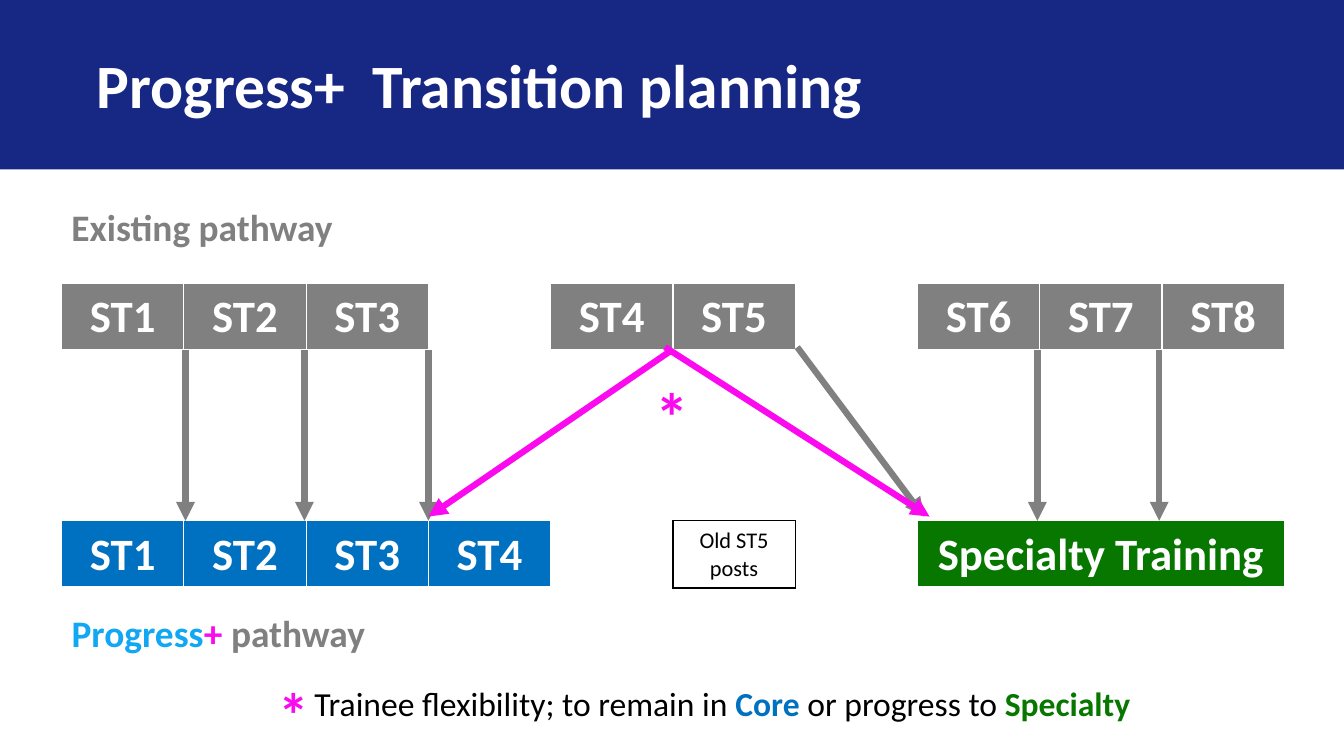
from lxml import etree
from pptx import Presentation
from pptx.dml.color import RGBColor
from pptx.enum.shapes import MSO_CONNECTOR, MSO_SHAPE
from pptx.enum.text import MSO_ANCHOR, PP_ALIGN
from pptx.oxml.ns import qn
from pptx.util import Pt

LINE = MSO_CONNECTOR.STRAIGHT
RECT = MSO_SHAPE.RECTANGLE
MIDDLE = MSO_ANCHOR.MIDDLE
LEFT, CENTER = PP_ALIGN.LEFT, PP_ALIGN.CENTER

HUES = {
    "navy": "162883", "gray": "808080", "blue": "0070C0", "green": "077700",
    "sky": "11A7F2", "pink": "FB09EF", "white": "FFFFFF", "black": "000000",
}
CELL = {"margin_left": Pt(9.6), "margin_right": Pt(9.6), "margin_top": Pt(4.8),
        "margin_bottom": Pt(4.8), "vertical_anchor": MIDDLE}
PLAIN = {"first_row": False, "horz_banding": False}
UNIT = 87.36
OLD = "Old ST5 posts"


def rgb(hue):
    """Return the named colour."""
    return RGBColor.from_string(HUES[hue])


def assign(item, values):
    """Set each value of a dict on an object."""
    for name, value in values.items():
        setattr(item, name, value)


def write(para, runs, size, align=LEFT):
    """Fill a paragraph with (text, hue, bold) runs."""
    para.alignment = align
    for text, hue, bold in runs:
        run = para.add_run()
        run.text = text
        assign(run.font, {"name": "Calibri", "size": Pt(size), "bold": bold})
        run.font.color.rgb = rgb(hue)


def label(slide, box, runs, size):
    """Place a text box with coloured runs."""
    frame = slide.shapes.add_textbox(*map(Pt, box)).text_frame
    frame.word_wrap = True
    write(frame.paragraphs[0], runs, size)


def header(slide, box):
    """Draw the title band with its title."""
    left, top, width, height = box
    band = slide.shapes.add_shape(RECT, *map(Pt, box))
    band.shadow.inherit = False
    band.fill.solid()
    band.fill.fore_color.rgb = rgb("navy")
    band.line.fill.background()
    title = slide.shapes.title
    assign(title, {"left": Pt(left + 62), "top": Pt(top + 30),
                   "width": Pt(679), "height": Pt(height - 60.5)})
    title.text_frame.vertical_anchor = MIDDLE
    write(title.text_frame.paragraphs[0],
          [("Progress+  Transition planning", "white", True)], 44)
    band._element.addnext(title._element)


def border(cell, sides):
    """Draw cell borders from (side, hue, width) triples."""
    props = cell._tc.get_or_add_tcPr()
    for spot, (side, hue, width) in enumerate(sides):
        line = etree.Element(qn("a:ln" + side), w=str(Pt(width)))
        fill = etree.SubElement(line, qn("a:solidFill"))
        etree.SubElement(fill, qn("a:srgbClr"), val=HUES[hue])
        props.insert(spot, line)


def pathway(slide, box, stages):
    """Draw one row of (text, hue, units) training stages."""
    left, top, width, height = box
    table = slide.shapes.add_table(1, len(stages), *map(Pt, box)).table
    assign(table, PLAIN)
    table.rows[0].height = Pt(height)
    names = [text for text, hue, units in stages] + [""]
    for spot, (text, hue, units) in enumerate(stages):
        table.columns[spot].width = Pt(units * UNIT)
        cell = table.cell(0, spot)
        assign(cell, CELL)
        if hue:
            cell.fill.solid()
            cell.fill.fore_color.rgb = rgb(hue)
        else:
            cell.fill.background()
        old = text == OLD
        if text:
            run = (text, "black" if old else "white", not old)
            write(cell.text_frame.paragraphs[0], [run], 16 if old else 32, CENTER)
        near = {"L": names[spot - 1], "R": names[spot + 1]}
        sides = [(side, "black" if OLD in (text, near.get(side)) else "white",
                  3 if side == "B" and not old else 1) for side in "LRTB"]
        border(cell, sides)


def arrow(slide, ends, hue):
    """Draw an arrow between two points."""
    link = slide.shapes.add_connector(LINE, *map(Pt, ends))
    link.line.color.rgb = rgb(hue)
    link.line.width = Pt(4.5)
    etree.SubElement(link.line._get_or_add_ln(), qn("a:tailEnd"), type="triangle")
    etree.SubElement(link._element.spPr, qn("a:effectLst"))


def flows(slide, box):
    """Draw the arrows between the two pathways."""
    left, top, width, height = box
    low = top + height
    for step in (88.5, 173.5, 262, 697, 784):
        arrow(slide, (left + step, top, left + step, low), "gray")
    arrow(slide, (left + 525.5, top - 2, left + 616, low - 3), "gray")
    arrow(slide, (left + 436, top, left + 262, low - 3), "pink")
    arrow(slide, (left + 431, top - 2, left + 620, low - 3), "pink")
    label(slide, (left + 417, top + 13.5, 39.6, 65.5), [("*", "pink", True)], 48)


def legend(slide, box):
    """Explain the asterisk below the pathways."""
    left, top, width, height = box
    label(slide, (left, top, 39.6, height), [("*", "pink", True)], 44)
    label(slide, (left + 25.5, top + 5, width - 25.5, 36), [
        ("Trainee flexibility; to remain in ", "black", False),
        ("Core", "blue", True),
        (" or progress to ", "black", False),
        ("Specialty", "green", True)], 24)


def main():
    """Build the transition slide."""
    deck = Presentation()
    assign(deck, {"slide_width": Pt(960), "slide_height": Pt(540)})
    slide = deck.slides.add_slide(deck.slide_layouts[5])
    header(slide, (0, 0, 960, 121))
    label(slide, (44, 142.5, 225, 39.6), [("Existing pathway", "gray", True)], 26.7)
    now = ["ST1", "ST2", "ST3", "", "ST4", "ST5", "", "ST6", "ST7", "ST8"]
    pathway(slide, (44, 202.5, 10 * UNIT, 48),
            [(text, "gray" if text else None, 1) for text in now])
    core = [(f"ST{year}", "blue", 1) for year in range(1, 5)]
    pathway(slide, (44, 372, 10 * UNIT, 48), core + [
        ("", None, 1), (OLD, None, 1), ("", None, 1),
        ("Specialty Training", "green", 3)])
    label(slide, (44, 432.5, 278, 39.6), [
        ("Progress", "sky", True), ("+ ", "pink", True),
        ("pathway", "gray", True)], 26.7)
    flows(slide, (44, 250, 10 * UNIT, 122))
    legend(slide, (192, 479.5, 714, 60.5))
    deck.save("out.pptx")


if __name__ == "__main__":
    main()
